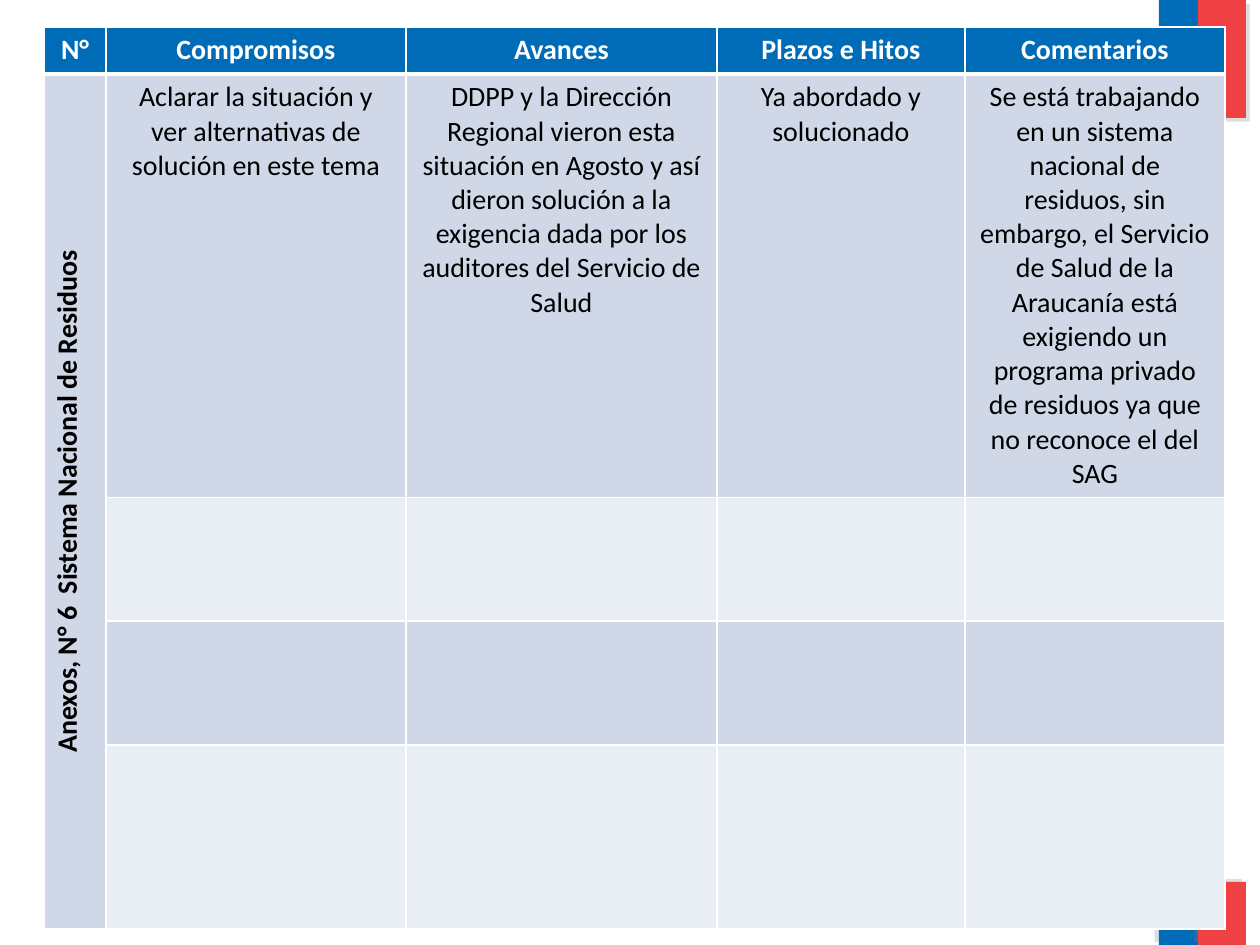
from typing import NamedTuple

from lxml.etree import SubElement
from pptx import Presentation
from pptx.dml.color import RGBColor
from pptx.enum.shapes import MSO_SHAPE
from pptx.enum.text import PP_ALIGN
from pptx.oxml.ns import qn
from pptx.util import Emu, Pt

EMU_PER_PX = 914400 / 126

BLUE, RED, WHITE, BLACK = "006CB7", "EF4144", "FFFFFF", "000000"
BANDS = ("D0D8E8", "E9EDF4")

COLUMN_WIDTHS = (62, 300, 311, 248, 260)
ROW_HEIGHTS = (46, 423, 124, 124, 184)

HEADERS = ("N°", "Compromisos", "Avances", "Plazos e Hitos", "Comentarios")
FIRST_ROW = (
    "Anexos, N° 6  Sistema Nacional de Residuos",
    "Aclarar la situación y ver alternativas de solución en este tema",
    "DDPP y la Dirección Regional vieron esta situación en Agosto y así "
    "dieron solución a la exigencia dada por los auditores del Servicio de Salud",
    "Ya abordado y solucionado",
    "Se está trabajando en un sistema nacional de residuos, sin embargo, el "
    "Servicio de Salud de la Araucanía está exigiendo un programa privado de "
    "residuos ya que no reconoce el del SAG",
)


class Band(NamedTuple):
    left: int
    top: int
    width: int
    height: int
    color: str
    shadow_degrees: int


FLAG_BANDS = (
    Band(1159, -1, 39, 120, BLUE, 45),
    Band(1198, 0, 48, 118, RED, 45),
    Band(1159, 882, 39, 63, BLUE, 215),
    Band(1198, 882, 48, 63, RED, 215),
)


def px(length: int) -> Emu:
    return Emu(round(length * EMU_PER_PX))


def rgb(color: str) -> RGBColor:
    return RGBColor.from_string(color)


def draw_band(slide, band: Band) -> None:
    shape = slide.shapes.add_shape(
        MSO_SHAPE.RECTANGLE, px(band.left), px(band.top), px(band.width), px(band.height))
    shape.fill.solid()
    shape.fill.fore_color.rgb = rgb(band.color)
    shape.line.fill.background()
    shape.shadow.inherit = False
    effects = shape._element.spPr.find(qn("a:effectLst"))
    shadow = SubElement(effects, qn("a:outerShdw"), dist=str(Pt(3)),
                        dir=str(band.shadow_degrees * 60000), rotWithShape="0")
    color = SubElement(shadow, qn("a:srgbClr"), val="808080")
    SubElement(color, qn("a:alpha"), val="25000")


def add_border(cell, side: str, points: int) -> None:
    line = SubElement(cell._tc.get_or_add_tcPr(), qn(f"a:ln{side}"), w=str(Pt(points)))
    fill = SubElement(line, qn("a:solidFill"))
    SubElement(fill, qn("a:srgbClr"), val=WHITE)


def format_cell(cell, fill: str, text: str, color: str, bold: bool, header: bool) -> None:
    # Borders precede the fill in the cell properties
    for side in "LRTB":
        add_border(cell, side, 3 if header and side == "B" else 1)
    cell.fill.solid()
    cell.fill.fore_color.rgb = rgb(fill)
    cell.text = text
    paragraph = cell.text_frame.paragraphs[0]
    paragraph.alignment = PP_ALIGN.CENTER
    paragraph.font.name = "Calibri"
    paragraph.font.size = Pt(16)
    paragraph.font.bold = bold
    paragraph.font.color.rgb = rgb(color)


def draw_table(slide) -> None:
    table = slide.shapes.add_table(
        len(ROW_HEIGHTS), len(COLUMN_WIDTHS), px(44), px(27),
        px(sum(COLUMN_WIDTHS)), px(sum(ROW_HEIGHTS))).table
    for column, width in zip(table.columns, COLUMN_WIDTHS):
        column.width = px(width)
    for row, height in zip(table.rows, ROW_HEIGHTS):
        row.height = px(height)

    texts = {0: HEADERS, 1: FIRST_ROW}
    for r in range(len(ROW_HEIGHTS)):
        header = r == 0
        for c in range(len(COLUMN_WIDTHS)):
            # The first column keeps one colour below the header
            fill = BLUE if header else BANDS[0 if c == 0 else (r - 1) % 2]
            text = texts[r][c] if r in texts else ""
            format_cell(table.cell(r, c), fill, text,
                        WHITE if header else BLACK, header or c == 0, header)

    # Rotated label across all body rows
    label = table.cell(1, 0)
    label.merge(table.cell(len(ROW_HEIGHTS) - 1, 0))
    label._tc.get_or_add_tcPr().set("vert", "vert270")


def main() -> None:
    presentation = Presentation()
    presentation.slide_width, presentation.slide_height = px(1260), px(945)
    slide = presentation.slides.add_slide(presentation.slide_layouts[6])

    # Flag colours at the right edge
    for band in FLAG_BANDS:
        draw_band(slide, band)

    # Commitments table
    draw_table(slide)
    presentation.save("out.pptx")


if __name__ == "__main__":
    main()
